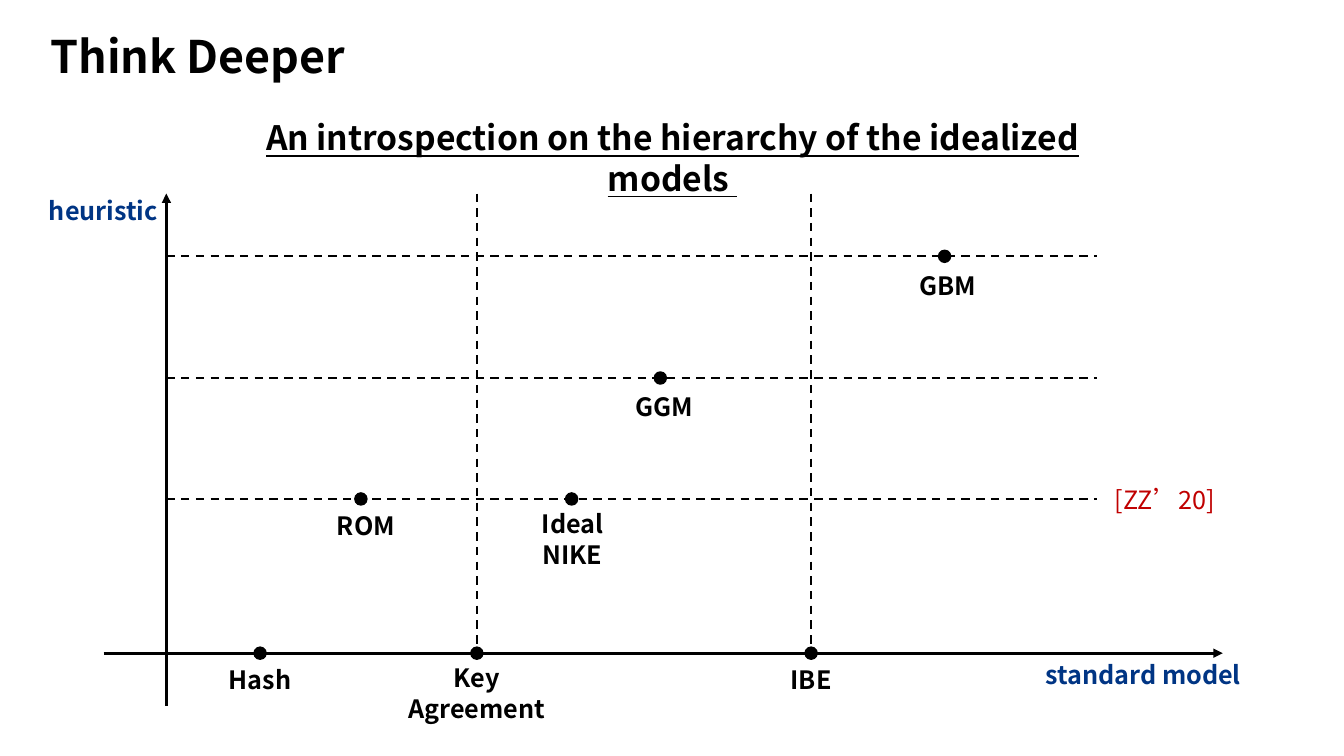
"""Draw a chart of idealized models, with all lengths in percent of the slide."""
from dataclasses import dataclass

from lxml import etree
from pptx import Presentation
from pptx.dml.color import RGBColor
from pptx.enum.dml import MSO_LINE
from pptx.enum.shapes import MSO_CONNECTOR, MSO_SHAPE
from pptx.enum.text import MSO_ANCHOR, MSO_AUTO_SIZE, PP_ALIGN
from pptx.oxml.ns import qn
from pptx.util import Emu, Inches, Pt

STRAIGHT, OVAL, DASH = MSO_CONNECTOR.STRAIGHT, MSO_SHAPE.OVAL, MSO_LINE.DASH
LEFT, CENTER = PP_ALIGN.LEFT, PP_ALIGN.CENTER
TOP, FIXED = MSO_ANCHOR.TOP, MSO_AUTO_SIZE.NONE
FONT = "Noto Sans CJK SC"
BLACK, BLUE, RED = "000000", "003584", "C00000"
WIDE, HIGH = Inches(13.333), Inches(7.5)
AXIS_X, AXIS_Y, TOP_Y, END_X = 12.38, 86.4, 25.6, 81.6
ROW, TWO_ROWS = 5.33, 9.47
LOW, MID, UP = 66, 50, 33.9
KEY_X, IBE_X = 35.48, 60.35


@dataclass
class Rule:
    """A line between two points."""
    x: float
    y: float
    end_x: float
    end_y: float
    axis: bool = False


@dataclass
class Text:
    """A box of text with its look."""
    words: str
    x: float
    y: float
    width: float
    height: float = ROW
    size: int = 18
    color: str = BLACK
    bold: bool = True
    under: bool = False
    align: PP_ALIGN = CENTER


@dataclass
class Model:
    """A dot and the label centred below it."""
    name: str
    x: float
    y: float
    mid: float
    top: float
    width: float = 7.35
    height: float = ROW


RULES = [
    Rule(7.72, AXIS_Y, 90.98, AXIS_Y, True),
    Rule(AXIS_X, 93.33, AXIS_X, TOP_Y, True),
    *(Rule(AXIS_X, y, END_X, y) for y in (LOW, MID, UP)),
    *(Rule(x, TOP_Y, x, AXIS_Y) for x in (KEY_X, IBE_X)),
]
MODELS = [
    Model("Hash", 19.35, AXIS_Y, 19.35, 87.2),
    Model("Key Agreement", KEY_X, AXIS_Y, KEY_X, 86.93, 13.65, TWO_ROWS),
    Model("IBE", IBE_X, AXIS_Y, IBE_X, 87.2),
    Model("ROM", 26.85, LOW, 27.23, 66.8),
    Model("Ideal NIKE", 42.53, LOW, 42.6, 66.53, height=TWO_ROWS),
    Model("GGM", 49.13, MID, 49.43, 51.07),
    Model("GBM", 70.28, UP, 70.5, 35.07),
]
TITLE = Text("Think Deeper", 3, 3.07, 32.85, 8.53, 32, align=LEFT)
TEXTS = [
    Text("An introspection on the hierarchy of the idealized models ",
         14.48, 14.8, 71.1, 6.67, 24, under=True),
    Text("[ZZ’20]", 82.2, 63.33, 15, color=RED, bold=False, align=LEFT),
    Text("standard model", 74.18, 86.53, 21.75, color=BLUE),
    Text("heuristic", 2.33, 25.07, 10.73, color=BLUE),
]


def across(part: float) -> Emu:
    """Turn a share of the width into a length."""
    return Emu(round(WIDE * part / 100))


def down(part: float) -> Emu:
    """Turn a share of the height into a length."""
    return Emu(round(HIGH * part / 100))


def paint(target, color: str) -> None:
    """Give a fill or a font colour format its colour."""
    target.rgb = RGBColor.from_string(color)


def write(shape, text: Text) -> None:
    """Place a shape, then set and format its text."""
    shape.left, shape.top = across(text.x), down(text.y)
    shape.width, shape.height = across(text.width), down(text.height)
    frame = shape.text_frame
    frame.text = text.words
    frame.word_wrap, frame.auto_size = True, FIXED
    frame.vertical_anchor = TOP
    para = frame.paragraphs[0]
    para.alignment = text.align
    para.space_before = Pt(0)
    para.line_spacing = Pt(round(text.size * 1.22))
    for run in para.runs:
        font = run.font
        font.name, font.size = FONT, Pt(text.size)
        font.bold, font.underline = text.bold, text.under
        paint(font.color, text.color)
        etree.SubElement(font._element, qn("a:ea"), typeface=FONT)


def add_text(slide, text: Text) -> None:
    """Add a text box."""
    write(slide.shapes.add_textbox(0, 0, 0, 0), text)


def add_rule(slide, rule: Rule) -> None:
    """Add an axis with an arrowhead or a dashed guide."""
    line = slide.shapes.add_connector(
        STRAIGHT, across(rule.x), down(rule.y),
        across(rule.end_x), down(rule.end_y))
    paint(line.line.color, BLACK)
    line.line.width = Pt(2.25 if rule.axis else 1.5)
    if rule.axis:
        pen = line.line._get_or_add_ln()
        etree.SubElement(pen, qn("a:tailEnd"), type="triangle")
    else:
        line.line.dash_style = DASH
    etree.SubElement(line._element.spPr, qn("a:effectLst"))


def add_model(slide, model: Model) -> None:
    """Add a dot and its label."""
    wide, high = 0.9, 1.6
    dot = slide.shapes.add_shape(
        OVAL, across(model.x - wide / 2), down(model.y - high / 2),
        across(wide), down(high))
    dot.shadow.inherit = False
    dot.fill.solid()
    paint(dot.fill.fore_color, BLACK)
    paint(dot.line.color, BLACK)
    dot.line.width = Pt(1)
    add_text(slide, Text(model.name, model.mid - model.width / 2,
                         model.top, model.width, model.height))


def main() -> None:
    """Build and save the slide."""
    deck = Presentation()
    deck.slide_width, deck.slide_height = WIDE, HIGH
    slide = deck.slides.add_slide(deck.slide_layouts[5])
    write(slide.shapes.title, TITLE)
    for rule in RULES:
        add_rule(slide, rule)
    for model in MODELS:
        add_model(slide, model)
    for text in TEXTS:
        add_text(slide, text)
    deck.save("out.pptx")


if __name__ == "__main__":
    main()
